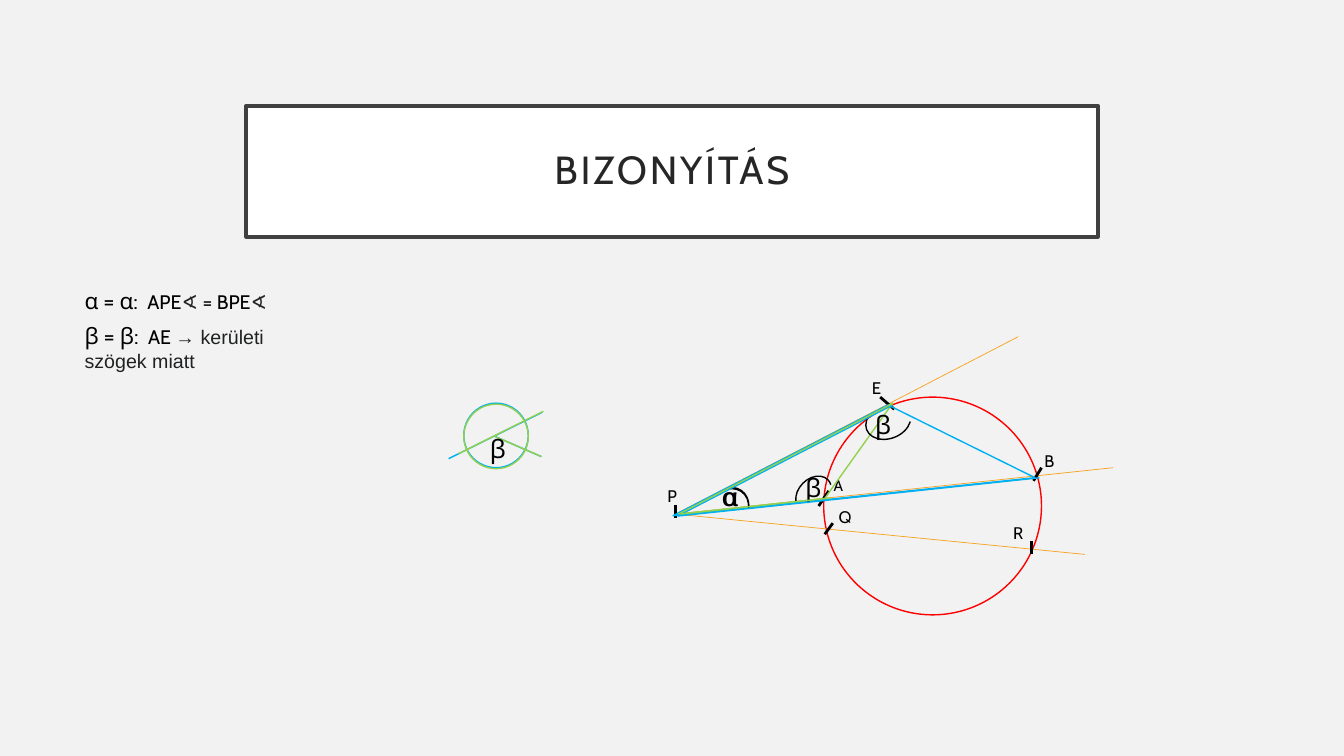
import pptx
import pptx.dml.color
import pptx.enum.shapes
import pptx.enum.text
import pptx.oxml.ns
import pptx.util
from pptx.util import Inches

SHAPE = pptx.enum.shapes.MSO_SHAPE
BLACK, RED, ORANGE, GREEN, BLUE = "000000", "FF0000", "F6A21D", "92D050", "00B0F0"


def rgb(value):
    """Turn a hex string into a colour."""
    return pptx.dml.color.RGBColor.from_string(value)


def style_run(r, size, color, font="Cabin"):
    """Set the size, colour and font of a run."""
    r.font.size = pptx.util.Pt(size)
    r.font.color.rgb = rgb(color)
    r.font.name = font


def add_line(slide, origin, start, end, color, width=1):
    """Draw a straight line between two points relative to the origin."""
    x, y = origin
    s = slide.shapes.add_connector(
        pptx.enum.shapes.MSO_CONNECTOR.STRAIGHT,
        Inches(x + start[0]), Inches(y + start[1]),
        Inches(x + end[0]), Inches(y + end[1]))
    s.line.color.rgb = rgb(color)
    s.line.width = pptx.util.Pt(width)
    pptx.oxml.ns.qn("a:effectLst")
    s._element.spPr.append(pptx.oxml.parse_xml(
        "<a:effectLst %s/>" % pptx.oxml.ns.nsdecls("a")))


def add_outline(slide, origin, kind, box, color, rotation=0, flip=None, adjust=()):
    """Draw an unfilled preset shape in a box relative to the origin."""
    left, top, width, height = box
    s = slide.shapes.add_shape(
        kind, Inches(origin[0] + left), Inches(origin[1] + top),
        Inches(width), Inches(height))
    s.shadow.inherit = False
    s.fill.background()
    s.line.color.rgb = rgb(color)
    s.line.width = pptx.util.Pt(1)
    s.rotation = rotation
    for i, value in enumerate(adjust):
        s.adjustments[i] = value
    if flip:
        s._element.spPr.find(pptx.oxml.ns.qn("a:xfrm")).set(flip, "1")


def add_text(slide, origin, box, runs):
    """Add a text box of (text, size, colour, font) runs."""
    left, top, width, height = box
    s = slide.shapes.add_textbox(
        Inches(origin[0] + left), Inches(origin[1] + top),
        Inches(width), Inches(height))
    tf = s.text_frame
    tf.word_wrap = True
    tf.auto_size = pptx.enum.text.MSO_AUTO_SIZE.SHAPE_TO_FIT_TEXT
    for text, size, color, font in runs:
        r = tf.paragraphs[0].add_run()
        r.text = text
        style_run(r, size, color, font)


def add_angle_name(slide, origin, name, left, top):
    """Write a Greek angle name."""
    width = 0.35 if name == "α" else 0.29
    add_text(slide, origin, (left, top, width, 0.4), [(name, 18, BLACK, "Cabin")])


def add_title(slide, left, top, width, height):
    """Format the title placeholder as a framed banner."""
    s = slide.shapes.title
    s.left, s.top, s.width, s.height = map(Inches, (left, top, width, height))
    s.fill.solid()
    s.fill.fore_color.rgb = rgb("FFFFFF")
    s.line.color.rgb = rgb("404040")
    s.line.width = pptx.util.Pt(2.5)
    tf = s.text_frame
    tf.text = "BIZONYÍTÁS"
    tf.vertical_anchor = pptx.enum.text.MSO_ANCHOR.MIDDLE
    tf.margin_left = tf.margin_right = tf.margin_top = tf.margin_bottom = Inches(0.2)
    p = tf.paragraphs[0]
    p.alignment = pptx.enum.text.PP_ALIGN.CENTER
    p.line_spacing = 0.9
    r = p.runs[0]
    style_run(r, 28, "262626")
    r.font._element.set("spc", "200")


def add_secants(slide, origin):
    """Draw the circle, the rays from P and the named points."""
    add_outline(slide, origin, SHAPE.OVAL, (1.67, 0.64, 2.16, 2.16), RED)
    for end in [(3.6, 0.04), (4.54, 1.34), (4.26, 2.2)]:
        add_line(slide, origin, (0.2, 1.8), end, ORANGE, 0.5)
    points = [
        ("P", (0.2, 1.71), (0.2, 1.84), (0.02, 1.47, 0.86, 0.3), 12),
        ("Q", (1.76, 1.89), (1.68, 2.0), (1.72, 1.68, 0.59, 0.3), 12),
        ("R", (3.73, 2.07), (3.73, 2.2), (3.45, 1.84, 0.86, 0.3), 12),
        ("E", (2.23, 0.64), (2.37, 0.76), (2.05, 0.4, 1.08, 0.3), 12),
        ("B", (3.83, 1.34), (3.75, 1.47), (3.76, 1.12, 0.78, 0.3), 12),
        ("A", (1.72, 1.57), (1.62, 1.72), (1.67, 1.37, 0.46, 0.29), 11),
    ]
    for name, start, end, box, size in points:
        add_line(slide, origin, start, end, BLACK, 2)
        add_text(slide, origin, box, [(name, size, BLACK, "Cabin")])


def add_triangles(slide, origin):
    """Draw the two similar triangles with their angles."""
    triangles = [
        ((0.22, 1.22, 2.39, 0.53), GREEN, 332.6, "flipV", 0.567),
        ((0.12, 0.76, 3.61, 0.87), BLUE, 354, None, 0.619),
    ]
    for box, color, rotation, flip, apex in triangles:
        add_outline(slide, origin, SHAPE.ISOSCELES_TRIANGLE, box, color,
                    rotation, flip, [apex])
    arcs = [
        ((0.54, 1.56, 0.4, 0.36), 124.1, (182.6, 21.74)),
        ((0.54, 1.55, 0.4, 0.36), 124.1, (182.6, 21.74)),
        ((1.37, 1.45, 0.4, 0.3), 134.7, (205.82, 94.86)),
        ((2.08, 0.71, 0.46, 0.34), 338.7, (193.28, 94.86)),
    ]
    for box, rotation, angles in arcs:
        add_outline(slide, origin, SHAPE.ARC, box, BLACK, rotation, "flipH", angles)
    for name, left, top in [("α", 0.56, 1.43), ("α", 0.57, 1.43),
                            ("β", 1.39, 1.34), ("β", 2.08, 0.71)]:
        add_angle_name(slide, origin, name, left, top)
    sides = [
        ((2.35, 0.72), (0.22, 1.82), BLUE),
        ((0.22, 1.82), (3.81, 1.44), BLUE),
        ((0.25, 1.8), (1.74, 1.64), GREEN),
        ((2.36, 0.7), (0.23, 1.8), GREEN),
    ]
    for start, end, color in sides:
        add_line(slide, origin, start, end, color)


def add_angle_detail(slide, origin):
    """Draw the small circle where the two β angles coincide."""
    layers = [(BLUE, 0, (0, 0.55), (0.93, 0.09)),
              (GREEN, 0.01, (0.1, 0.5), (0.94, 0.08))]
    for color, top, start, end in layers:
        add_outline(slide, origin, SHAPE.OVAL, (0.15, top, 0.64, 0.64), color)
        add_line(slide, origin, start, end, color)
        add_line(slide, origin, (0.46, 0.33), (0.92, 0.53), color)
    add_angle_name(slide, origin, "β", 0.31, 0.25)


def add_reasons(slide, origin):
    """Write the reasons for the equal angles."""
    angle = ("∢", 14, "242424", "Calibri")
    add_text(slide, origin, (0, 0, 2.41, 0.37), [
        ("α = α: ", 16, BLACK, "Cabin"), (" APE", 14, BLACK, "Cabin"), angle,
        (" = BPE", 14, BLACK, "Cabin"), angle])
    add_text(slide, origin, (0, 0.35, 2.22, 0.61), [
        ("β = β: ", 16, BLACK, "Cabin"), (" AE ", 14, BLACK, "Cabin"),
        ("→ kerületi szögek miatt", 14, "202122", "Arial")])


def main():
    """Build the proof slide and save it."""
    prs = pptx.Presentation()
    prs.slide_width, prs.slide_height = Inches(13.33), Inches(7.5)
    slide = prs.slides.add_slide(prs.slide_layouts[5])
    slide.background.fill.solid()
    slide.background.fill.fore_color.rgb = rgb("F2F2F2")
    add_title(slide, 2.44, 1.05, 8.45, 1.3)
    add_secants(slide, (6.5, 3.3))
    add_triangles(slide, (6.5, 3.3))
    add_reasons(slide, (0.74, 2.8))
    add_angle_detail(slide, (4.45, 4))
    prs.save("out.pptx")


if __name__ == "__main__":
    main()
